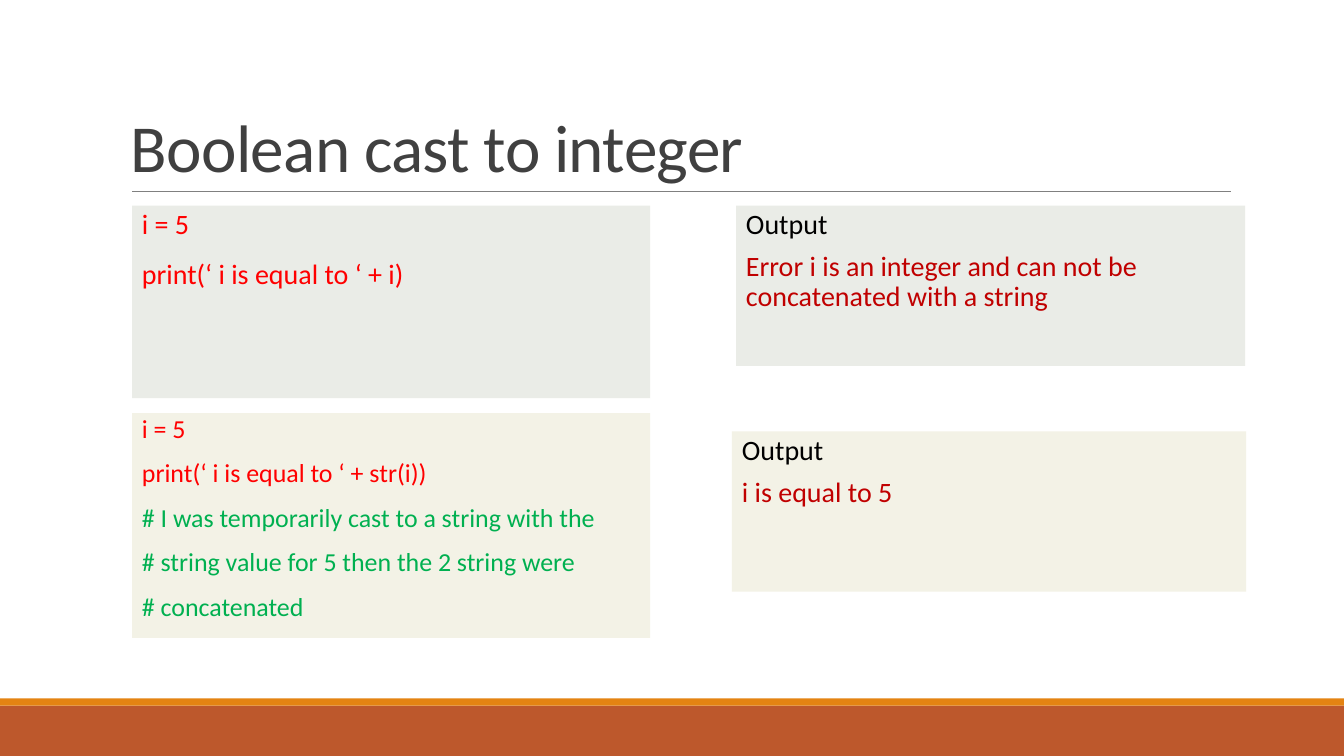
import dataclasses

import pptx
import pptx.dml.color
import pptx.enum.shapes
import pptx.enum.text
import pptx.util
from lxml import etree
from pptx.util import Inches


@dataclasses.dataclass(frozen=True)
class Theme:
    """Colours, font and type sizes of the deck."""
    font: str = "Calibri"
    title: str = "404040"
    rule: str = "808080"
    band: str = "BD582C"
    stripe: str = "E48312"
    grey_panel: str = "EAECE7"
    cream_panel: str = "F3F2E6"
    code: str = "FF0000"
    comment: str = "00B050"
    label: str = "000000"
    result: str = "C00000"
    title_size: float = 48
    body_size: float = 20
    small_size: float = 18.5


THEME = Theme()


def colour(code):
    """Turn a hex code into a colour."""
    return pptx.dml.color.RGBColor.from_string(code)


def add_block(page, box, fill):
    """Add a plain filled rectangle in the box."""
    block = page.shapes.add_shape(
        pptx.enum.shapes.MSO_SHAPE.RECTANGLE, *map(Inches, box))
    block.shadow.inherit = False
    block.fill.solid()
    block.fill.fore_color.rgb = colour(fill)
    block.line.fill.background()
    return block


def write_lines(shape, lines, size, spacing, before=0, after=0):
    """Fill a shape with (text, colour) paragraphs."""
    frame = shape.text_frame
    frame.word_wrap = True
    frame.text = "\n".join(text for text, _ in lines)
    for para, (_, ink) in zip(frame.paragraphs, lines):
        para.alignment = pptx.enum.text.PP_ALIGN.LEFT
        para.line_spacing = spacing
        para.space_before = pptx.util.Pt(before)
        para.space_after = pptx.util.Pt(after)
        for span in para.runs:
            span.font.name = THEME.font
            span.font.size = pptx.util.Pt(size)
            span.font.color.rgb = colour(ink)


def add_panel(page, box, fill, lines, size=THEME.body_size, spacing=0.9, before=12):
    """Add a tinted panel with text starting at its top left."""
    panel = add_block(page, box, fill)
    frame = panel.text_frame
    frame.vertical_anchor = pptx.enum.text.MSO_ANCHOR.TOP
    frame.margin_left, frame.margin_right = Inches(0.1), Inches(0)
    write_lines(panel, lines, size, spacing, before, after=2)


def add_title(page, box, text):
    """Add the title with the thin rule along its lower edge."""
    left, top, width, height = box
    title = page.shapes.add_textbox(*map(Inches, box))
    title.text_frame.vertical_anchor = pptx.enum.text.MSO_ANCHOR.BOTTOM
    write_lines(title, [(text, THEME.title)], THEME.title_size, 0.85)
    for span in title.text_frame.paragraphs[0].runs:
        span.font._element.set("spc", "-50")
    bottom = Inches(top + height)
    rule = page.shapes.add_connector(
        pptx.enum.shapes.MSO_CONNECTOR.STRAIGHT,
        Inches(left + 0.11), bottom, Inches(left + width + 0.01), bottom)
    rule.line.color.rgb = colour(THEME.rule)
    rule.line.width = pptx.util.Pt(0.5)
    etree.SubElement(rule._element.spPr, pptx.oxml.ns.qn("a:effectLst"))


def add_footer(page, box):
    """Add the footer band with a stripe on top of it."""
    left, top, width, height = box
    stripe = 0.07
    add_block(page, (left, top + stripe, width, height - stripe), THEME.band)
    add_block(page, (left, top, width, stripe), THEME.stripe)


def build_slide(page):
    """Place the title, the code and output panels, and the footer."""
    add_footer(page, (0, 6.93, 13.33, 0.57))
    add_title(page, (1.2, 0.31, 11, 1.59), "Boolean cast to integer")
    add_panel(page, (1.31, 2.04, 5.14, 1.91), THEME.grey_panel, [
        ("i = 5", THEME.code),
        ("print(‘ i is equal to ‘ + i)", THEME.code)])
    add_panel(page, (7.3, 2.04, 5.05, 1.59), THEME.grey_panel, [
        ("Output", THEME.label),
        ("Error i is an integer and can not be concatenated with a string",
         THEME.result)], before=6)
    add_panel(page, (1.31, 4.1, 5.14, 2.23), THEME.cream_panel, [
        ("i = 5", THEME.code),
        ("print(‘ i is equal to ‘ + str(i))", THEME.code),
        ("# I was temporarily cast to a string with the", THEME.comment),
        ("# string value for 5 then the 2 string were", THEME.comment),
        ("# concatenated", THEME.comment)],
        size=THEME.small_size, spacing=0.8)
    add_panel(page, (7.26, 4.28, 5.1, 1.59), THEME.cream_panel, [
        ("Output", THEME.label),
        ("i is equal to 5", THEME.result)], before=6)


def main():
    """Build and save the deck."""
    deck = pptx.Presentation()
    deck.slide_width, deck.slide_height = Inches(13.33), Inches(7.5)
    build_slide(deck.slides.add_slide(deck.slide_layouts[6]))
    deck.save("out.pptx")


if __name__ == "__main__":
    main()
